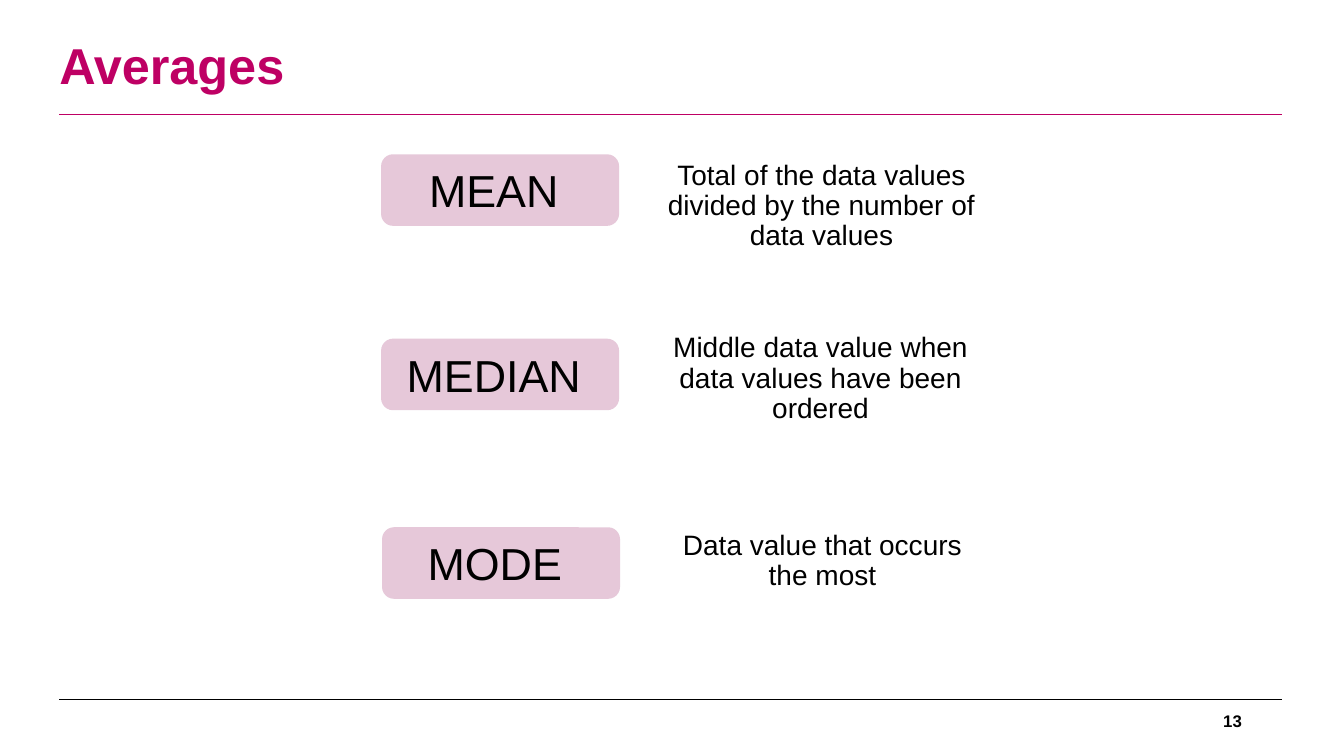
from lxml.etree import SubElement
from pptx import Presentation
from pptx.dml.color import RGBColor
from pptx.enum.shapes import MSO_CONNECTOR as Connector, MSO_SHAPE as Preset
from pptx.enum.text import MSO_ANCHOR as Anchor, PP_ALIGN as Align
from pptx.oxml.ns import qn
from pptx.util import Pt

MAGENTA, PINK, BLACK = "BE0064", "E6C8D9", "000000"
RULE_LEFT, RULE_RIGHT = 42.5, 915.8
AVERAGES = [
    ("MEAN ", (272.2, 110.2),
     "Total of the data values divided by the number of data values", (463.7, 111.6, 246.2, 73.4)),
    ("MEDIAN ", (272.2, 241.9),
     "Middle data value when data values have been ordered", (463, 234.7, 246.2, 73.4)),
    ("MODE ", (272.9, 376.6),
     "Data value that occurs the most", (464.4, 375.8, 246.2, 51.1)),
]


def color(hex_string):
    """Return the colour for a hex string."""
    return RGBColor.from_string(hex_string)


def write(shape, text, size, align, anchor=Anchor.MIDDLE, hex_string=BLACK, bold=False):
    """Fill a shape with one formatted paragraph and return it."""
    frame = shape.text_frame
    frame.word_wrap = True
    frame.vertical_anchor = anchor
    paragraph = frame.paragraphs[0]
    paragraph.text = text
    paragraph.alignment = align
    font = paragraph.font
    font.name, font.size, font.bold = "Arial", Pt(size), bold
    font.color.rgb = color(hex_string)
    return paragraph


def add_text_box(slide, box):
    """Add an empty text box at a box given in points."""
    return slide.shapes.add_textbox(*map(Pt, box))


def add_rule(slide, top, hex_string):
    """Draw a thin horizontal rule between the slide margins."""
    rule = slide.shapes.add_connector(
        Connector.STRAIGHT, Pt(RULE_LEFT), Pt(top), Pt(RULE_RIGHT), Pt(top))
    rule.line.color.rgb = color(hex_string)
    rule.line.width = Pt(0.75)
    SubElement(rule.element.spPr, qn("a:effectLst"))


def add_header(slide, box):
    """Add the title with the rule that closes the header."""
    paragraph = write(add_text_box(slide, box), "Averages", 36, Align.LEFT,
                      hex_string=MAGENTA, bold=True)
    paragraph.line_spacing = 0.9
    add_rule(slide, 82.1, MAGENTA)


def add_footer(slide, box):
    """Add the slide number below the footer rule."""
    add_rule(slide, box[1] - 0.7, BLACK)
    write(add_text_box(slide, box), "13", 12, Align.RIGHT, bold=True)


def add_term(slide, term, box):
    """Add a rounded label naming one kind of average."""
    label = slide.shapes.add_shape(Preset.ROUNDED_RECTANGLE, *map(Pt, box))
    label.shadow.inherit = False
    label.fill.solid()
    label.fill.fore_color.rgb = color(PINK)
    label.line.fill.background()
    write(label, term, 32, Align.CENTER)


def add_definition(slide, definition, box):
    """Add the explanation that stands beside a label."""
    paragraph = write(add_text_box(slide, box), definition, 20, Align.CENTER, Anchor.TOP)
    paragraph.line_spacing = 0.9
    paragraph.space_after = Pt(6)


def main():
    """Build the slide and save it."""
    presentation = Presentation()
    presentation.slide_width, presentation.slide_height = Pt(960), Pt(540)
    slide = presentation.slides.add_slide(presentation.slide_layouts[6])
    add_header(slide, (35.3, 8.6, 720, 79.9))
    add_footer(slide, (678.2, 500.4, 216, 28.8))
    for term, position, definition, box in AVERAGES:
        add_term(slide, term, (*position, 170, 51.1))
        add_definition(slide, definition, box)
    presentation.save("out.pptx")


if __name__ == "__main__":
    main()
